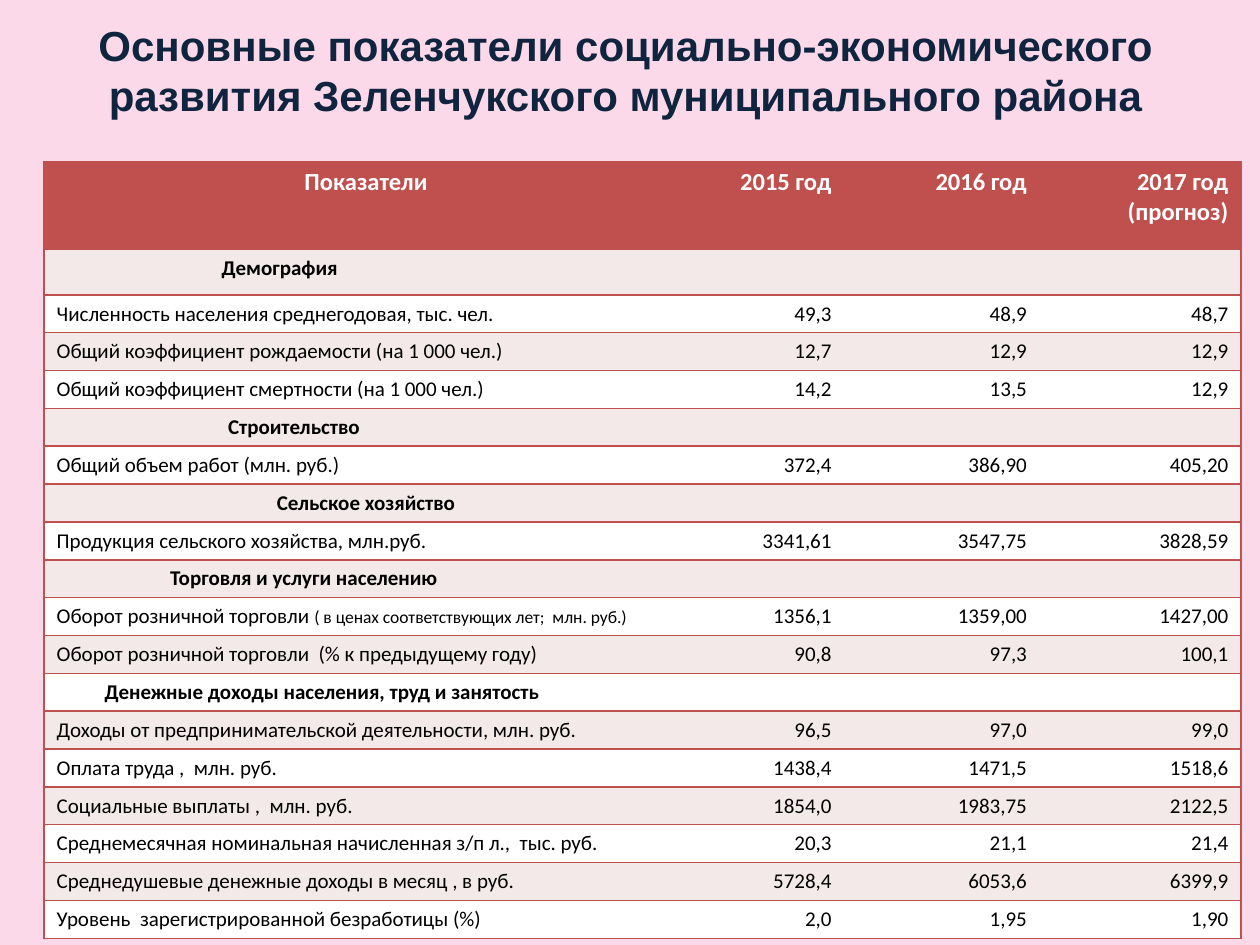
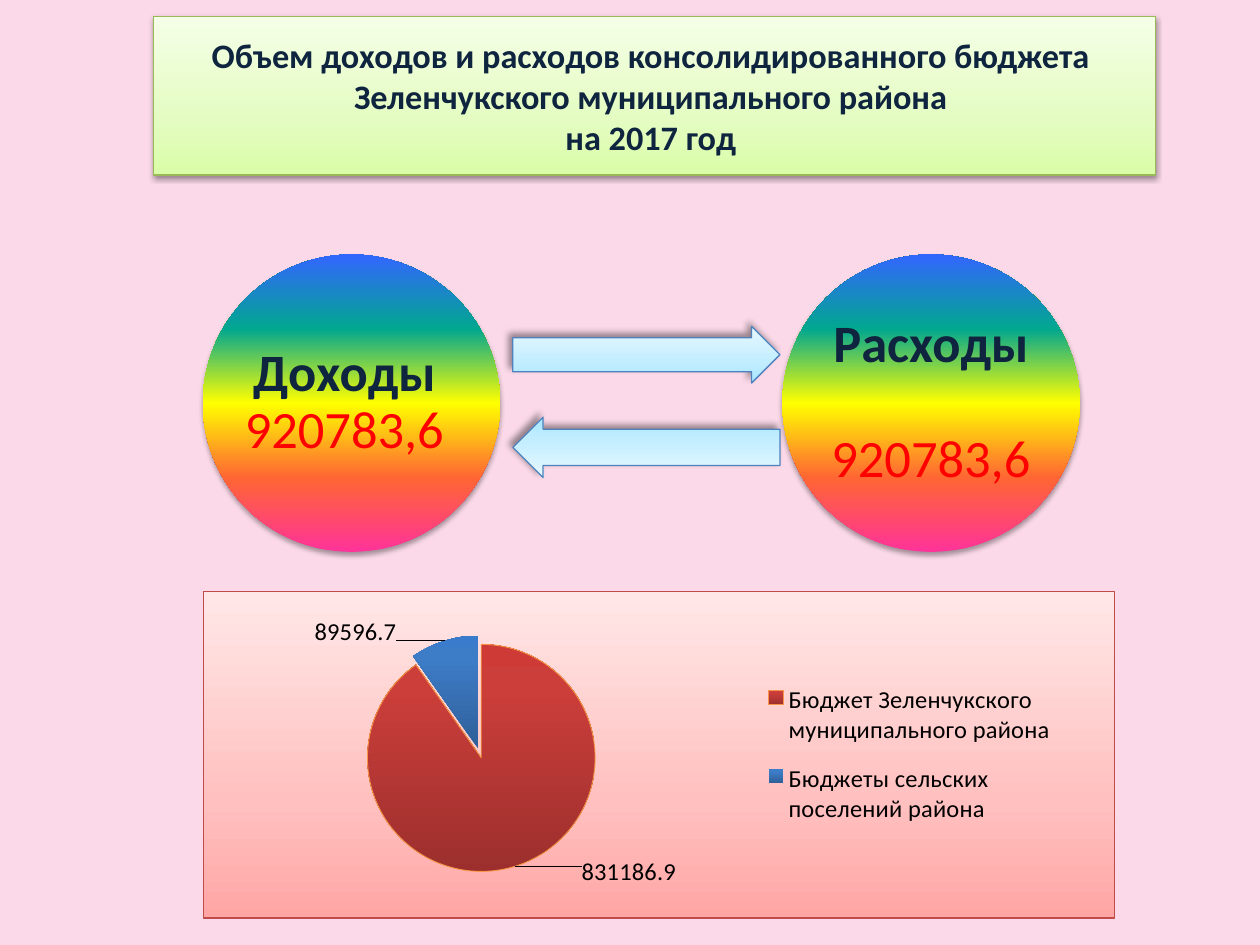
from lxml import etree
from pptx import Presentation
from pptx.chart.data import CategoryChartData
from pptx.dml.color import RGBColor
from pptx.enum.chart import XL_CHART_TYPE as ChartType, XL_LABEL_POSITION as LabelPos, XL_LEGEND_POSITION as LegendPos
from pptx.enum.shapes import MSO_SHAPE as Preset
from pptx.enum.text import MSO_ANCHOR as Anchor, PP_ALIGN as Align
from pptx.oxml import parse_xml
from pptx.oxml.ns import nsdecls, qn
from pptx.util import Inches, Pt

COLORS = {
    "page": "FBD9E8", "navy": "0F243E", "brick": "C0504D", "band": "F4E9E9",
    "white": "FFFFFF", "black": "000000", "red": "FF0000", "green": "98B955",
    "blue": "4F81BD", "rose": "BF4C48", "orange": "F79646",
}
GRADIENTS = {
    "lime": [(0, "DAFDA7"), (35, "E4FCC2"), (100, "F5FFE7")],
    "rainbow": [(0, "FF3399"), (25, "FF6633"), (50, "FFFF00"), (75, "01A78F"), (100, "3366FF")],
    "sky": [(0, "A7E6FF"), (35, "C1EDFF"), (100, "E7F8FF")],
    "rose": [(0, "FFA6A5"), (35, "FFC0BF"), (100, "FFE7E7")],
    "district": [(0, "9C2F2D"), (80, "CB3E3A"), (100, "CE3B37")],
    "villages": [(0, "2F5F99"), (80, "3D7CC7"), (100, "3A7CCB")],
}
COLUMN_WIDTHS = [5.11, 1.24, 1.55, 1.47]
HEADER = ["Показатели", "2015 год", "2016 год", "2017 год\n(прогноз)"]
SECTION_INDENTS = {
    "Демография": 1.31,
    "Строительство": 1.36,
    "Сельское хозяйство": None,
    "Торговля и услуги населению": 0.9,
    "Денежные доходы населения, труд и занятость": 0.38,
}
RETAIL = "Оборот розничной торговли "
INDICATORS = [
    ["Демография"],
    ["Численность населения среднегодовая, тыс. чел.", "49,3", "48,9", "48,7"],
    ["Общий коэффициент рождаемости (на 1 000 чел.)", "12,7", "12,9", "12,9"],
    ["Общий коэффициент смертности (на 1 000 чел.)", "14,2", "13,5", "12,9"],
    ["Строительство"],
    ["Общий объем работ (млн. руб.)", "372,4", "386,90", "405,20"],
    ["Сельское хозяйство"],
    ["Продукция сельского хозяйства, млн.руб.", "3341,61", "3547,75", "3828,59"],
    ["Торговля и услуги населению"],
    [RETAIL, "1356,1", "1359,00", "1427,00"],
    [RETAIL + " (% к предыдущему году)", "90,8", "97,3", "100,1"],
    ["Денежные доходы населения, труд и занятость"],
    ["Доходы от предпринимательской деятельности, млн. руб.", "96,5", "97,0", "99,0"],
    ["Оплата труда ,  млн. руб.", "1438,4", "1471,5", "1518,6"],
    ["Социальные выплаты ,  млн. руб.", "1854,0", "1983,75", "2122,5"],
    ["Среднемесячная номинальная начисленная з/п л.,  тыс. руб.", "20,3", "21,1", "21,4"],
    ["Среднедушевые денежные доходы в месяц , в руб.", "5728,4", "6053,6", "6399,9"],
    ["Уровень  зарегистрированной безработицы (%)", "2,0", "1,95", "1,90"],
]
BUDGETS = {
    "Бюджет Зеленчукского муниципального района": 831186.9,
    "Бюджеты сельских поселений района": 89596.7,
}


def rgb(name):
    """Return the named colour."""
    return RGBColor.from_string(COLORS[name])


def style_font(font, size, color="black", bold=False, face="Calibri"):
    """Set the look of a font."""
    font.size, font.bold, font.name = Pt(size), bold, face
    font.color.rgb = rgb(color)


def add_span(para, text, size, color="black", bold=False, face="Calibri"):
    """Append one run to a paragraph."""
    span = para.add_run()
    span.text = text
    style_font(span.font, size, color, bold, face)


def fill_lines(frame, lines, align, *style):
    """Write one paragraph for each line."""
    for index, line in enumerate(lines):
        para = frame.add_paragraph() if index else frame.paragraphs[0]
        para.alignment = align
        add_span(para, line, *style)


def add_page(deck):
    """Add a blank pink page."""
    page = deck.slides.add_slide(deck.slide_layouts[6])
    page.background.fill.solid()
    page.background.fill.fore_color.rgb = rgb("page")
    return page


def paint_gradient(props, name):
    """Swap the solid fill for a gradient that runs upwards."""
    stops = "".join(
        f'<a:gs pos="{place * 1000}"><a:srgbClr val="{color}"/></a:gs>'
        for place, color in GRADIENTS[name])
    gradient = parse_xml(
        f'<a:gradFill {nsdecls("a")} rotWithShape="1"><a:gsLst>{stops}</a:gsLst>'
        '<a:lin ang="16200000" scaled="0"/></a:gradFill>')
    props.replace(props.find(qn("a:solidFill")), gradient)


def add_figure(page, preset, place, gradient, shadow, line=None):
    """Add a preset shape with a gradient and a soft shadow."""
    figure = page.shapes.add_shape(preset, *map(Inches, place))
    figure.fill.solid()
    if line:
        figure.line.color.rgb = rgb(line)
        figure.line.width = Pt(0.75)
    else:
        figure.line.fill.background()
    props = figure.element.spPr
    paint_gradient(props, gradient)
    alpha, blur, distance, angle = shadow
    props.append(parse_xml(
        f'<a:effectLst {nsdecls("a")}><a:outerShdw blurRad="{Pt(blur)}" dist="{Pt(distance)}" '
        f'dir="{angle * 60000}" rotWithShape="0"><a:srgbClr val="{COLORS["black"]}">'
        f'<a:alpha val="{alpha * 1000}"/></a:srgbClr></a:outerShdw></a:effectLst>'))
    figure.text_frame.vertical_anchor = Anchor.MIDDLE
    return figure


def add_title(page, text):
    """Add the page title."""
    box = page.shapes.add_textbox(Inches(0.28), Inches(0.17), Inches(9.37), Inches(0.77))
    box.text_frame.word_wrap = True
    box.text_frame.vertical_anchor = Anchor.MIDDLE
    fill_lines(box.text_frame, [text], Align.CENTER, 24, "navy", True, "Arial")


def style_cell(cell, fill, sides):
    """Fill a cell and draw lines on the given sides only."""
    props = cell._tc.get_or_add_tcPr()
    for side in "LRTB":
        edge = etree.SubElement(props, qn(f"a:ln{side}"), w=str(Pt(1)))
        if side in sides:
            paint = etree.SubElement(edge, qn("a:solidFill"))
            etree.SubElement(paint, qn("a:srgbClr"), val=COLORS["brick"])
        else:
            etree.SubElement(edge, qn("a:noFill"))
    cell.fill.solid()
    cell.fill.fore_color.rgb = rgb(fill)


def write_section(table, row, text):
    """Write a section heading, across the row unless it is centred."""
    cell = table.cell(row, 0)
    indent = SECTION_INDENTS[text]
    if indent is None:
        fill_lines(cell.text_frame, [text], Align.CENTER, 12, "black", True)
    else:
        cell.margin_left = Inches(0.1 + indent)
        fill_lines(cell.text_frame, [text], Align.LEFT, 12, "black", True)
        cell.merge(table.cell(row, 3))


def add_indicator_table(page):
    """Add the table of indicators."""
    rows = [HEADER] + INDICATORS
    heights = [0.7, 0.36] + [0.3] * (len(rows) - 2)
    frame = page.shapes.add_table(
        len(rows), 4, Inches(0.35), Inches(1.28), Inches(9.37), Inches(sum(heights)))
    table = frame.table
    table.horz_banding = table.first_row = False
    for column, width in zip(table.columns, COLUMN_WIDTHS):
        column.width = Inches(width)
    for row, values in enumerate(rows):
        table.rows[row].height = Inches(heights[row])
        fill = "brick" if row == 0 else "band" if row % 2 else "white"
        is_section = len(values) == 1
        if is_section:
            write_section(table, row, values[0])
        for column in range(4):
            cell = table.cell(row, column)
            sides = "TB" + ("L" if column == 0 else "R" if column == 3 else "")
            style_cell(cell, fill, "LRTB" if cell.is_merge_origin else sides)
            if is_section:
                if not column or cell.is_spanned:
                    continue
                cell.text_frame.paragraphs[0].font.size = Pt(12)
                continue
            first = Align.LEFT if row else Align.CENTER
            style = (12,) if row else (14, "white", True)
            fill_lines(cell.text_frame, values[column].split("\n"),
                       Align.RIGHT if column else first, *style)
            if values[column] == RETAIL:
                add_span(cell.text_frame.paragraphs[0],
                         "( в ценах соответствующих лет;  млн. руб.)", 10)


def add_circle(page, left, label, gap=0, right_indent=0):
    """Add a rainbow circle with a label and the total."""
    circle = add_figure(page, Preset.OVAL, (left, 2.02, 2.36, 2.36), "rainbow", (35, 3.1, 1.8, 90))
    frame = circle.text_frame
    frame.word_wrap = False
    frame.margin_left = frame.margin_right = frame.margin_top = frame.margin_bottom = Inches(0.04)
    name, total = frame.paragraphs[0], frame.add_paragraph()
    add_span(name, label, 30, "navy", True)
    add_span(total, "920783,6", 30, "red")
    for para in (name, total):
        para.alignment, para.line_spacing = Align.CENTER, 0.9
    total.space_before = Pt(gap)
    name._p.get_or_add_pPr().set("marR", str(Inches(right_indent)))


def add_arrow(page, top, height, rotation):
    """Add a block arrow between the circles."""
    arrow = add_figure(page, Preset.RIGHT_ARROW, (4.07, top, 2.12, height), "sky", (40, 4, 3, 225), "blue")
    arrow.adjustments[0], arrow.adjustments[1] = 0.6, 0.5
    arrow.rotation = rotation


def make_layout(**values):
    """Return a manual chart layout."""
    parts = "".join(f'<c:{key} val="{value}"/>' for key, value in values.items())
    return parse_xml(f'<c:layout {nsdecls("c")}><c:manualLayout>{parts}</c:manualLayout></c:layout>')


def set_layout(element, layout, after=None):
    """Replace the layout of a chart part."""
    for old in element.findall(qn("c:layout")):
        element.remove(old)
    if after:
        element.find(qn(after)).addnext(layout)
    else:
        element.insert(0, layout)


def add_budget_pie(page):
    """Add the pie of the two budget levels."""
    data = CategoryChartData()
    data.categories = list(BUDGETS)
    data.add_series("Series 1", list(BUDGETS.values()))
    place = map(Inches, (1.61, 4.69, 7.24, 2.6))
    chart = page.shapes.add_chart(ChartType.PIE, *place, data).chart
    chart.has_title = False
    style_font(chart.font, 10)
    chart.has_legend = True
    chart.legend.position = LegendPos.RIGHT
    chart.legend.include_in_layout = False
    style_font(chart.legend.font, 14)

    space = chart._chartSpace
    props = parse_xml(
        f'<c:spPr {nsdecls("c", "a")}><a:solidFill/><a:ln w="{Pt(0.75)}"><a:solidFill>'
        f'<a:srgbClr val="{COLORS["rose"]}"/></a:solidFill></a:ln></c:spPr>')
    paint_gradient(props, "rose")
    space.find(qn("c:chart")).addnext(props)
    set_layout(space.xpath(".//c:plotArea")[0], make_layout(
        layoutTarget="inner", xMode="edge", yMode="edge", x=0.18, y=0.12, w=0.25, h=0.78))
    set_layout(space.xpath(".//c:legend")[0], make_layout(
        xMode="edge", yMode="edge", x=0.6, y=0.23, w=0.35, h=0.54), "c:legendPos")

    series = chart.plots[0].series[0]
    for index in range(len(BUDGETS)):
        point = series.points[index]
        point.format.fill.solid()
        point.data_label.position = LabelPos.OUTSIDE_END
        style_font(point.data_label.font, 14)
    outline = series.points[0].format.line
    outline.color.rgb, outline.width = rgb("orange"), Pt(0.5)
    slices = space.xpath(".//c:dPt")
    for piece, name in zip(slices, ("district", "villages")):
        paint_gradient(piece.find(qn("c:spPr")), name)
    slices[1].find(qn("c:spPr")).addprevious(parse_xml(f'<c:explosion {nsdecls("c")} val="8"/>'))
    for label, (shift_x, shift_y) in zip(space.xpath(".//c:dLbl"), ((0.07, -0.05), (-0.05, 0.04))):
        set_layout(label, make_layout(x=shift_x, y=shift_y), "c:idx")


def main():
    """Build the deck."""
    deck = Presentation()
    deck.slide_width, deck.slide_height = Inches(10), Inches(7.5)

    page = add_page(deck)
    add_title(page, "Основные показатели социально-экономического развития Зеленчукского муниципального района")
    add_indicator_table(page)

    page = add_page(deck)
    banner = add_figure(page, Preset.RECTANGLE, (1.22, 0.13, 7.95, 1.26), "lime", (38, 3.1, 1.6, 90), "green")
    fill_lines(banner.text_frame, [
        "Объем доходов и расходов консолидированного бюджета ",
        "Зеленчукского муниципального района ",
        "на 2017 год ",
    ], Align.CENTER, 19.6, "navy", True)
    add_circle(page, 1.61, "Доходы", right_indent=0.11)
    add_arrow(page, 2.59, 0.45, 0)
    add_circle(page, 6.21, "Расходы", gap=33)
    add_arrow(page, 3.31, 0.48, 180)
    add_budget_pie(page)
    deck.save("out.pptx")


if __name__ == "__main__":
    main()
